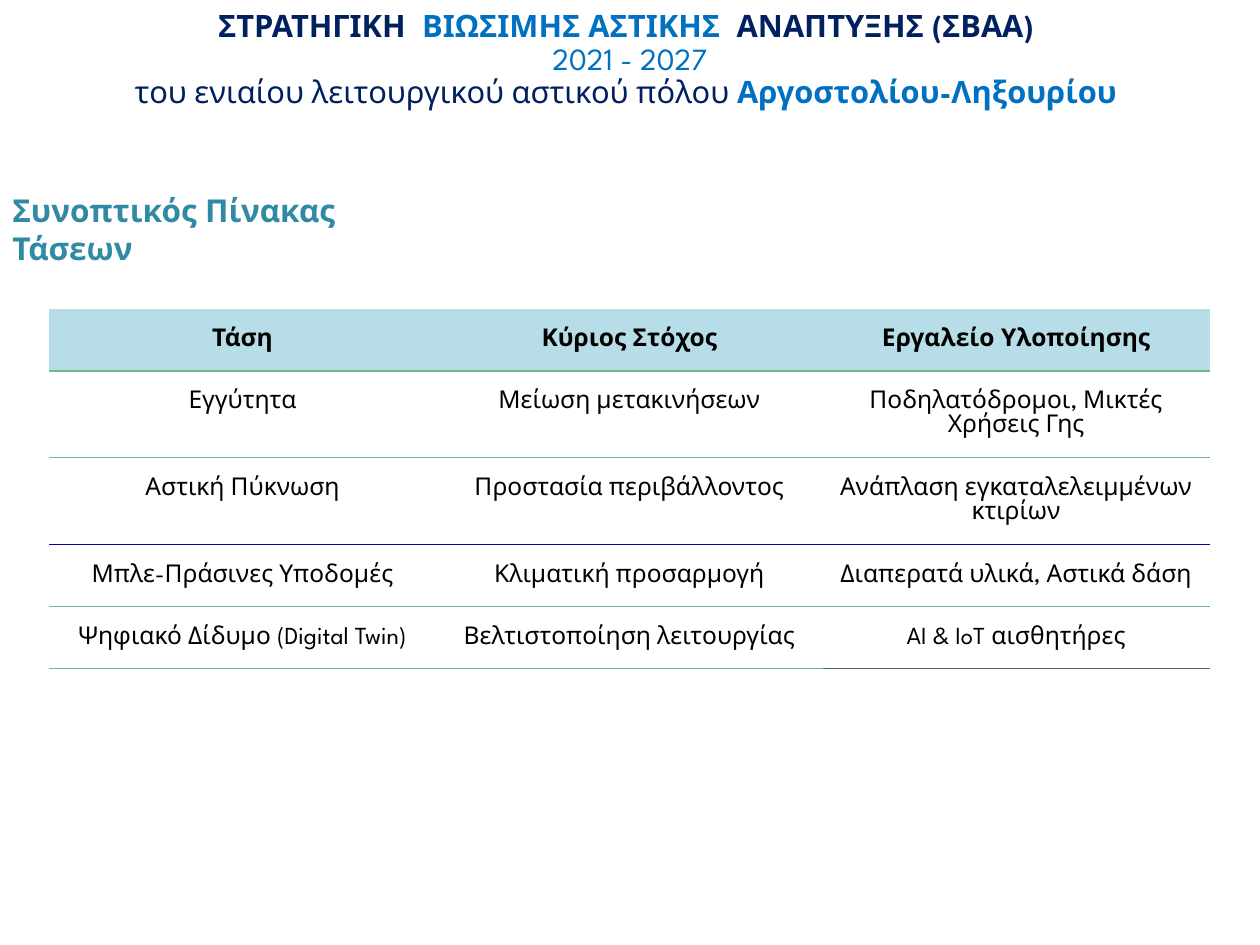
"""Build the slide with the summary table of urban trends."""
from pptx import Presentation, util as u
from pptx.dml.color import RGBColor
from pptx.enum import text as t
from pptx.oxml import parse_xml
from pptx.oxml.ns import nsdecls, qn


def style(font, size, color, bold):
    look = {"name": "League Spartan", "size": u.Pt(size), "bold": bold}
    for key, val in look.items():
        setattr(font, key, val)
    font.color.rgb = RGBColor.from_string(color)


def edge(cell, side, color):
    cell._tc.get_or_add_tcPr().append(parse_xml(
        f'<a:{side} {nsdecls("a")} w="12700"><a:solidFill>'
        f'<a:srgbClr val="{color}"/></a:solidFill></a:{side}>'))


navy, blue, green = "002060", "0070C0", "70B888"
deck = Presentation()
deck.slide_width, deck.slide_height = u.Inches(10), u.Inches(7.5)
slide = deck.slides.add_slide(deck.slide_layouts[5])

title = slide.shapes.title
title.left, title.top = u.Inches(0), u.Inches(0)
title.width, title.height = u.Inches(10), u.Inches(1.26)
frame = title.text_frame
opts = {"word_wrap": True, "auto_size": t.MSO_AUTO_SIZE.NONE,
        "vertical_anchor": t.MSO_ANCHOR.MIDDLE, "margin_bottom": u.Inches(0.35)}
for key, val in opts.items():
    setattr(frame, key, val)
para = frame.paragraphs[0]
para.alignment, para.line_spacing = t.PP_ALIGN.CENTER, 0.9
lines = [
    [("ΣΤΡΑΤΗΓΙΚΗ  ", navy, True), ("ΒΙΩΣΙΜΗΣ ΑΣΤΙΚΗΣ  ", blue, True),
     ("ΑΝΑΠΤΥΞΗΣ (ΣΒΑΑ) ", navy, True)],
    [("2021 - 2027", blue, False)],
    [("του ενιαίου λειτουργικού αστικού πόλου ", navy, False),
     ("Αργοστολίου-Ληξουρίου ", blue, True)],
]
for i, line in enumerate(lines):
    if i:
        para.add_line_break()
    for words, color, bold in line:
        run = para.add_run()
        run.text = words
        style(run.font, 17.6, color, bold)

rows = [
    ("Τάση", "Κύριος Στόχος", "Εργαλείο Υλοποίησης"),
    ("Εγγύτητα", "Μείωση μετακινήσεων", "Ποδηλατόδρομοι, Μικτές Χρήσεις Γης"),
    ("Αστική Πύκνωση", "Προστασία περιβάλλοντος",
     "Ανάπλαση εγκαταλελειμμένων κτιρίων"),
    ("Μπλε-Πράσινες Υποδομές", "Κλιματική προσαρμογή",
     "Διαπερατά υλικά, Αστικά δάση"),
    ("Ψηφιακό Δίδυμο (Digital Twin)", "Βελτιστοποίηση λειτουργίας",
     "AI & IoT αισθητήρες"),
]
rules = [green, green, "00059D", green, green]
highs = [0.49, 0.69, 0.69, 0.49, 0.49]
grid = slide.shapes.add_table(5, 3, u.Inches(0.39), u.Inches(2.45),
                              u.Inches(9.21), u.Inches(sum(highs)))
plain = "{2D5ABB26-0587-4C30-8999-92F81FD0307C}"
grid._element.find(".//" + qn("a:tableStyleId")).text = plain
table = grid.table
table.horz_banding = False
for r, row in enumerate(rows):
    table.rows[r].height = u.Inches(highs[r])
    for c, words in enumerate(row):
        cell = table.cell(r, c)
        sides = {"margin_left": 0, "margin_right": 0,
                 "margin_top": 0.15, "margin_bottom": 0.15}
        for key, val in sides.items():
            setattr(cell, key, u.Inches(val))
        if r:
            edge(cell, "lnT", rules[r - 1])
        edge(cell, "lnB", "506A72" if (r, c) == (4, 2) else rules[r])
        if r:
            cell.fill.background()
        else:
            cell.fill.solid()
            cell.fill.fore_color.rgb = RGBColor.from_string("B7DEE8")
        para = cell.text_frame.paragraphs[0]
        para.alignment, para.line_spacing = t.PP_ALIGN.CENTER, 1.07
        para.space_after = u.Pt(8)
        run = para.add_run()
        run.text = words
        style(run.font, 14, "000000", r == 0)

box = slide.shapes.add_textbox(u.Inches(0), u.Inches(1.46),
                               u.Inches(3.64), u.Inches(0.71))
frame = box.text_frame
frame.word_wrap, frame.vertical_anchor = True, t.MSO_ANCHOR.MIDDLE
run = frame.paragraphs[0].add_run()
run.text = "Συνοπτικός Πίνακας Τάσεων"
style(run.font, 18, "318AA3", True)

deck.save("out.pptx")
